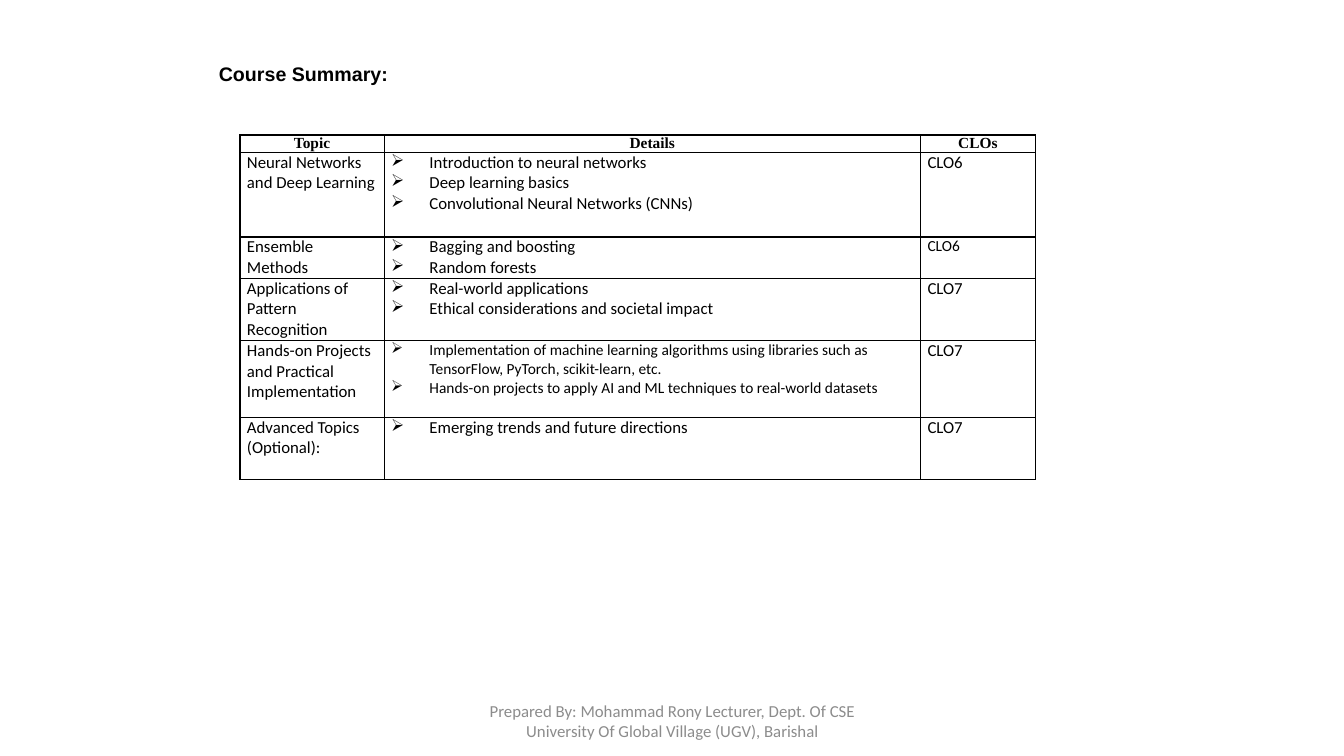
import pptx
import pptx.dml.color
import pptx.enum.text
import pptx.oxml
import pptx.oxml.ns
import pptx.util
from pptx.enum.text import MSO_ANCHOR, PP_ALIGN
from pptx.util import Inches

COLORS = {"ink": "000000", "footer": "8C8C8C"}
COLUMN_WIDTHS = [1.43, 5.32, 1.14]
ROW_HEIGHTS = [0.17, 0.84, 0.41, 0.62, 0.76, 0.62]
HEADINGS = ["Topic", "Details", "CLOs"]
TOPICS = [
    ("Neural Networks and Deep Learning",
     ["Introduction to neural networks", "Deep learning basics",
      "Convolutional Neural Networks (CNNs)"], 12, "CLO6", 12),
    ("Ensemble Methods", ["Bagging and boosting", "Random forests"], 12, "CLO6", 11),
    ("Applications of Pattern Recognition",
     ["Real-world applications", "Ethical considerations and societal impact"],
     12, "CLO7", 12),
    ("Hands-on Projects and Practical Implementation",
     ["Implementation of machine learning algorithms using libraries such as "
      "TensorFlow, PyTorch, scikit-learn, etc.",
      "Hands-on projects to apply AI and ML techniques to real-world datasets"],
     11, "CLO7", 12),
    ("Advanced Topics (Optional):", ["Emerging trends and future directions"],
     12, "CLO7", 12),
]


def set_font(para, name, size, color="ink", bold=False):
    """Format every run of a paragraph alike."""
    para.font.name = name
    para.font.size = pptx.util.Pt(size)
    para.font.bold = bold
    para.font.color.rgb = pptx.dml.color.RGBColor.from_string(COLORS[color])


def set_margins(target, left, top, right, bottom):
    """Set the inner margins of a cell or text frame."""
    target.margin_left, target.margin_top = Inches(left), Inches(top)
    target.margin_right, target.margin_bottom = Inches(right), Inches(bottom)


def add_bullet(para):
    """Give a paragraph an arrowhead bullet with a hanging indent."""
    properties = para._p.get_or_add_pPr()
    properties.set("marL", str(Inches(0.38)))
    properties.set("indent", str(-Inches(0.38)))
    bullet = pptx.oxml.parse_xml(
        f'<a:buChar {pptx.oxml.ns.nsdecls("a")} char="➢"/>')
    properties.append(bullet)


def outline_cell(cell):
    """Draw a thin line on all four sides of an unfilled cell."""
    properties = cell._tc.get_or_add_tcPr()
    for side in "LRTB":
        properties.append(pptx.oxml.parse_xml(
            f'<a:ln{side} {pptx.oxml.ns.nsdecls("a")} w="{pptx.util.Pt(1)}">'
            f'<a:solidFill><a:srgbClr val="{COLORS["ink"]}"/></a:solidFill>'
            f'</a:ln{side}>'))
    cell.fill.background()


def fill_cell(cell, lines, size, bulleted=False):
    """Write the lines of a body cell."""
    set_margins(cell, 0.07, 0, 0.07, 0)
    cell.text = "\n".join(lines)
    for para in cell.text_frame.paragraphs:
        if bulleted:
            add_bullet(para)
        set_font(para, "Calibri", size)
    outline_cell(cell)


def fill_heading(cell, heading):
    """Write a column heading."""
    set_margins(cell, 0, 0, 0, 0)
    cell.vertical_anchor = MSO_ANCHOR.BOTTOM
    cell.text = heading
    para = cell.text_frame.paragraphs[0]
    para.alignment = PP_ALIGN.CENTER
    set_font(para, "Times New Roman", 11, bold=True)
    outline_cell(cell)


def add_title(page, left, top, width, height):
    """Place the slide title."""
    title = page.shapes.title
    title.left, title.top = Inches(left), Inches(top)
    title.width, title.height = Inches(width), Inches(height)
    frame = title.text_frame
    frame.text = "Course Summary:"
    frame.auto_size = pptx.enum.text.MSO_AUTO_SIZE.NONE
    frame.vertical_anchor = MSO_ANCHOR.TOP
    set_margins(frame, 0.35, 0.06, 0, 0.06)
    para = frame.paragraphs[0]
    para.alignment = PP_ALIGN.LEFT
    set_font(para, "Arial", 14, bold=True)


def add_summary_table(page, left, top):
    """Place the table of topics, details and outcomes."""
    table = page.shapes.add_table(
        len(ROW_HEIGHTS), len(COLUMN_WIDTHS), Inches(left), Inches(top),
        Inches(sum(COLUMN_WIDTHS)), Inches(sum(ROW_HEIGHTS))).table
    table.first_row = table.horz_banding = False
    for column, width in zip(table.columns, COLUMN_WIDTHS):
        column.width = Inches(width)
    for row, height in zip(table.rows, ROW_HEIGHTS):
        row.height = Inches(height)
    for column, heading in enumerate(HEADINGS):
        fill_heading(table.cell(0, column), heading)
    for row, (topic, details, detail_size, outcome, outcome_size) in enumerate(TOPICS, 1):
        fill_cell(table.cell(row, 0), [topic], 12)
        fill_cell(table.cell(row, 1), details, detail_size, bulleted=True)
        fill_cell(table.cell(row, 2), [outcome], outcome_size)


def add_footer(page, left, top, width, height):
    """Place the author line at the foot of the slide."""
    box = page.shapes.add_textbox(
        Inches(left), Inches(top), Inches(width), Inches(height))
    frame = box.text_frame
    frame.word_wrap = True
    frame.vertical_anchor = MSO_ANCHOR.MIDDLE
    set_margins(frame, 0.2, 0, 0.2, 0)
    frame.text = ("Prepared By: Mohammad Rony Lecturer, Dept. Of CSE "
                  "University Of Global Village (UGV), Barishal")
    para = frame.paragraphs[0]
    para.alignment = PP_ALIGN.CENTER
    set_font(para, "Calibri", 12, "footer")


def main():
    """Build the course summary slide."""
    deck = pptx.Presentation()
    deck.slide_width, deck.slide_height = Inches(13.33), Inches(7.5)
    page = deck.slides.add_slide(deck.slide_layouts[5])
    add_title(page, 1.82, 0.55, 2.14, 0.48)
    add_summary_table(page, 2.38, 1.34)
    add_footer(page, 4.42, 6.95, 4.5, 0.4)
    deck.save("out.pptx")


if __name__ == "__main__":
    main()
